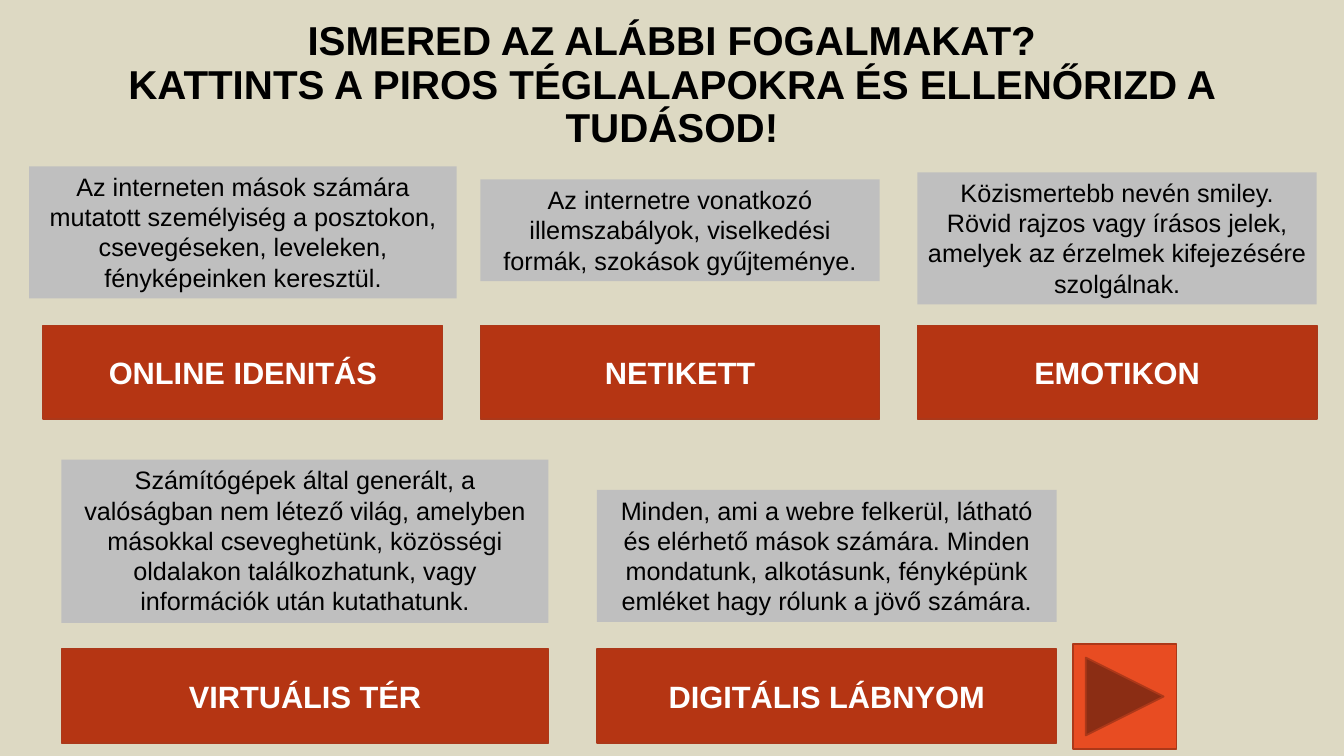
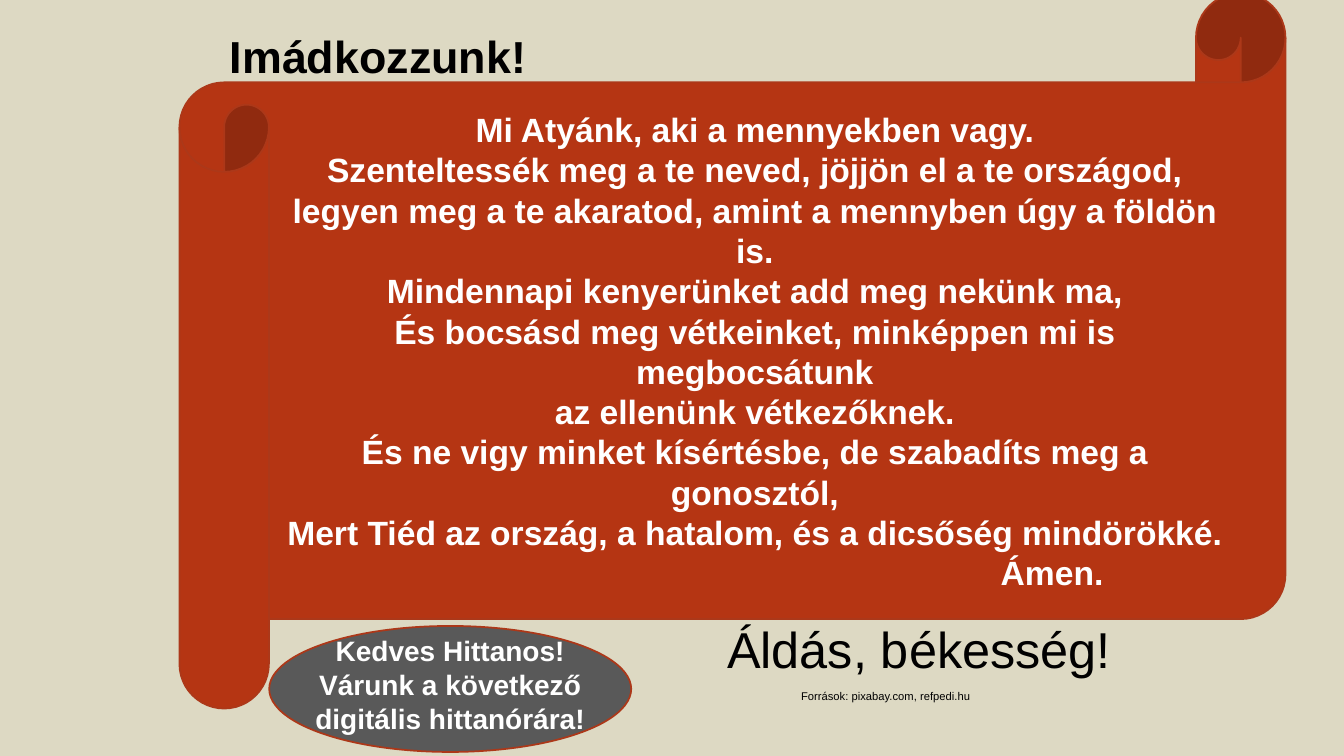
from dataclasses import dataclass

from lxml import etree
from pptx import Presentation
from pptx.dml.color import RGBColor
from pptx.enum import shapes, text
from pptx.util import Inches, Pt

KIND = shapes.MSO_SHAPE
ALIGN = text.PP_ALIGN
MID, TOP = text.MSO_ANCHOR.MIDDLE, text.MSO_ANCHOR.TOP


@dataclass(frozen=True)
class Theme:
    font: str = "Arial"
    back: str = "DDD9C3"
    red: str = "B53513"
    edge: str = "AC3819"
    bright: str = "E84C22"
    grey: str = "BFBFBF"
    dark: str = "595959"
    black: str = "000000"
    white: str = "FFFFFF"
    title: float = 28.8
    head: float = 32
    label: float = 22
    note: float = 18
    verse: float = 24
    call: float = 20
    bless: float = 36
    small: float = 8


T = Theme()


def rgb(code):
    return RGBColor.from_string(code)


def write(shape, lines, size, color, bold=False, anchor=TOP, space=None):
    """Fill a shape with centred paragraphs of one style."""
    frame = shape.text_frame
    frame.word_wrap = True
    frame.vertical_anchor = anchor
    for i, line in enumerate(lines):
        para = frame.paragraphs[0] if i == 0 else frame.add_paragraph()
        para.text = line
        para.alignment = ALIGN.CENTER
        if space:
            para.line_spacing = space
        font = para.font
        font.name, font.size, font.bold = T.font, Pt(size), bold
        font.color.rgb = rgb(color)
    return frame


def form(slide, kind, box, fill, edge=None):
    shape = slide.shapes.add_shape(kind, *map(Inches, box))
    shape.shadow.inherit = False
    shape.fill.solid()
    shape.fill.fore_color.rgb = rgb(fill)
    if edge:
        shape.line.color.rgb = rgb(edge)
        shape.line.width = Pt(1.25)
    else:
        shape.line.fill.background()
    return shape


def label(slide, box, lines, size, color=T.black, **style):
    shape = slide.shapes.add_textbox(*map(Inches, box))
    return write(shape, lines, size, color, **style)


def page(deck):
    slide = deck.slides.add_slide(deck.slide_layouts[6])
    fill = slide.background.fill
    fill.solid()
    fill.fore_color.rgb = rgb(T.back)
    return slide


def card(slide, box, term, note, drop, tall, grow=0):
    """Red term at the foot of the box, grey note drop inches from its top."""
    x, y, w, h = box
    bar = 0.93
    red = form(slide, KIND.RECTANGLE, (x, y + h - bar, w, bar), T.red, T.edge)
    write(red, [term], T.label, T.white, bold=True, anchor=MID)
    area = (x - grow, y + drop, w + 2 * grow, tall)
    grey = form(slide, KIND.RECTANGLE, area, T.grey)
    write(grey, [note], T.note, T.black)


def terms(deck):
    slide = page(deck)
    label(slide, (1, 0.13, 11.33, 1.45),
          ["ISMERED AZ ALÁBBI FOGALMAKAT?\v"
           "KATTINTS A PIROS TÉGLALAPOKRA ÉS ELLENŐRIZD A TUDÁSOD!"],
          T.title, bold=True, anchor=MID, space=0.9)

    # Upper row: three equal columns
    upper = [
        ("ONLINE IDENITÁS",
         "Az interneten mások számára mutatott személyiség a posztokon, "
         "csevegéseken, leveleken, fényképeinken keresztül.", 0, 1.31, 0.14),
        ("NETIKETT",
         "Az internetre vonatkozó illemszabályok, viselkedési formák, "
         "szokások gyűjteménye.", 0.13, 1.01),
        ("EMOTIKON",
         "Közismertebb nevén smiley. Rövid rajzos vagy írásos jelek, "
         "amelyek az érzelmek kifejezésére szolgálnak.", 0.06, 1.31),
    ]
    wide, gap = 3.96, 0.375
    for i, parts in enumerate(upper):
        card(slide, (0.43 + i * (wide + gap), 1.65, wide, 2.51), *parts)

    # Lower row: two wider cards
    low, high = 4.56, 2.81
    card(slide, (0.61, low, 4.83, high), "VIRTUÁLIS TÉR",
         "Számítógépek által generált, a valóságban nem létező világ, "
         "amelyben másokkal cseveghetünk, közösségi oldalakon "
         "találkozhatunk, vagy információk után kutathatunk.", 0, 1.62)
    card(slide, (5.92, low, 4.56, high), "DIGITÁLIS LÁBNYOM",
         "Minden, ami a webre felkerül, látható és elérhető mások számára. "
         "Minden mondatunk, alkotásunk, fényképünk emléket hagy rólunk a "
         "jövő számára.", 0.3, 1.31)

    # Next button
    form(slide, KIND.ACTION_BUTTON_FORWARD_OR_NEXT,
         (10.64, 6.39, 1.03, 1.04), T.bright, T.edge)


def scroll(slide, box):
    """Prayer on a scroll, its last word set far to the right."""
    shape = form(slide, KIND.HORIZONTAL_SCROLL, box, T.red, T.edge)
    frame = write(shape, [
        "Mi Atyánk, aki a mennyekben vagy.",
        "Szenteltessék meg a te neved, jöjjön el a te országod,",
        "legyen meg a te akaratod, amint a mennyben úgy a földön is.",
        "Mindennapi kenyerünket add meg nekünk ma,",
        "És bocsásd meg vétkeinket, minképpen mi is megbocsátunk",
        "az ellenünk vétkezőknek.",
        "És ne vigy minket kísértésbe, de szabadíts meg a gonosztól,",
        "Mert Tiéd az ország, a hatalom, és a dicsőség mindörökké.",
        "Ámen.",
    ], T.verse, T.white, bold=True, anchor=MID)
    amen = frame.paragraphs[-1]
    amen.alignment = ALIGN.LEFT
    props = amen._p.get_or_add_pPr()
    props.set("marL", str(Inches(7.16)))
    props.set("indent", "0")


def badge(slide, box):
    """Oval with an invitation that spans its full width."""
    x, y, w, h = box
    form(slide, KIND.OVAL, box, T.dark, T.edge)
    label(slide, (x, y + 0.03, w, h - 0.14),
          ["Kedves Hittanos!", "Várunk a következő digitális hittanórára!"],
          T.call, T.white, bold=True)


def prayer(deck):
    slide = page(deck)
    label(slide, (1.78, 0.24, 3.94, 0.62), ["Imádkozzunk!"], T.head, bold=True)
    scroll(slide, (1.78, -0.07, 10.97, 7.1))
    badge(slide, (2.67, 6.21, 3.59, 1.25))

    # Farewell and sources
    label(slide, (5.78, 6.08, 6.67, 0.71), ["Áldás, békesség!"], T.bless)
    label(slide, (6.37, 6.79, 4.83, 0.24),
          ["Források: pixabay.com, refpedi.hu"], T.small)


def main():
    deck = Presentation()
    deck.slide_width, deck.slide_height = Inches(13.33), Inches(7.5)
    terms(deck)
    prayer(deck)
    deck.save("out.pptx")


if __name__ == "__main__":
    main()
